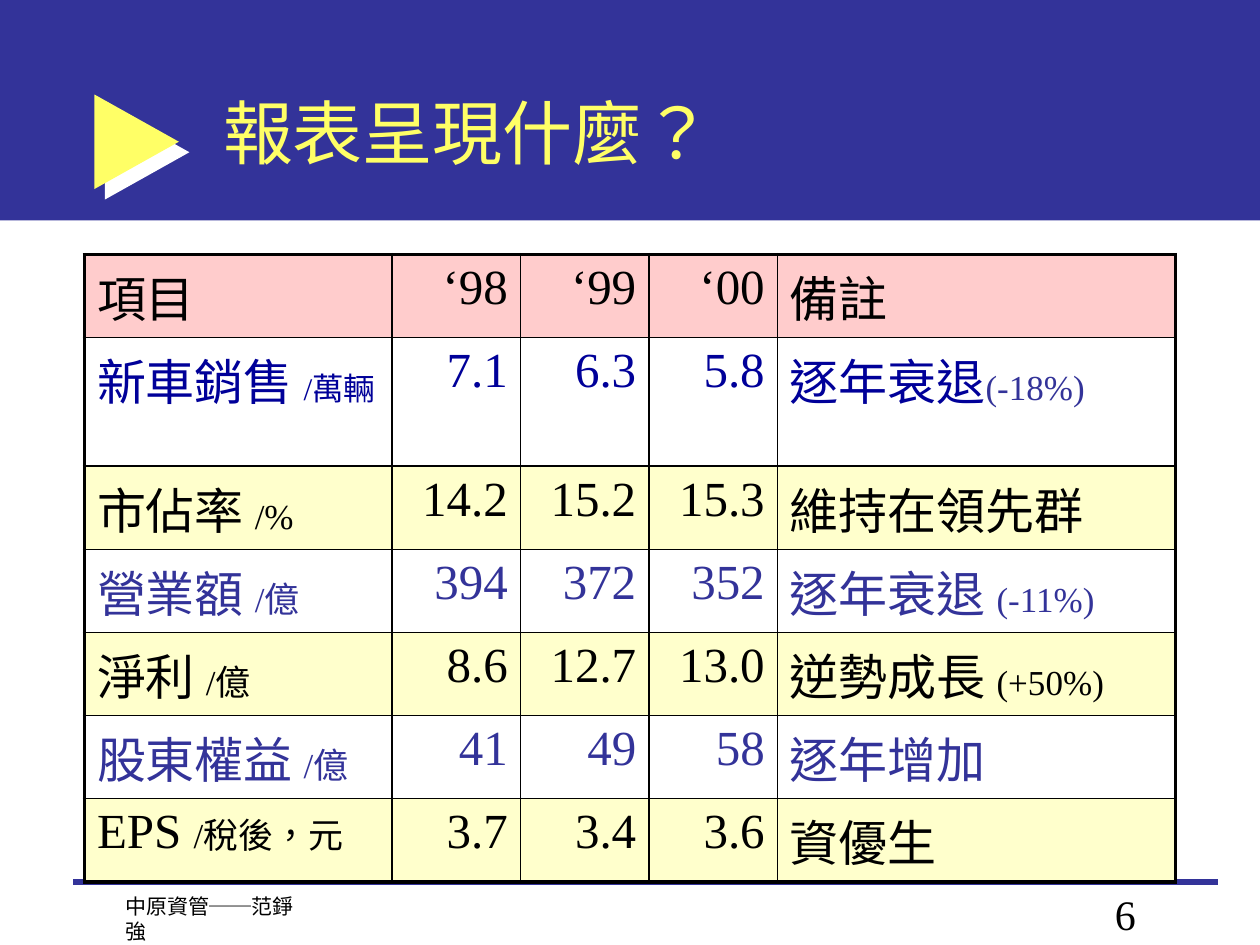
from lxml.etree import SubElement
from pptx import Presentation
from pptx.dml.color import RGBColor
from pptx.enum.shapes import MSO_CONNECTOR, MSO_SHAPE
from pptx.enum.text import MSO_ANCHOR, PP_ALIGN
from pptx.oxml.ns import qn
from pptx.util import Emu, Pt

EMU_PER_PX = 9144  # 100 px to the inch

BLUE, NAVY, YELLOW = "333399", "000099", "FFFF66"
BLACK, WHITE, PINK, CREAM = "000000", "FFFFFF", "FFCCCC", "FFFFCC"
SERIF, SANS = "Times New Roman", "Arial"


def px(length):
    return Emu(length * EMU_PER_PX)


def color(value):
    return RGBColor.from_string(value)


class SlideBuilder:
    def __init__(self, slide):
        self.slide = slide
        self.shapes = slide.shapes

    def add_run(self, paragraph, text, size, value, font=SERIF):
        run = paragraph.add_run()
        run.text = text
        run.font.name = font
        run.font.size = Pt(size)
        run.font.color.rgb = color(value)
        # Traditional Chinese glyphs and punctuation
        run._r.get_or_add_rPr().set("lang", "zh-TW")

    def shape(self, kind, box, fill):
        shape = self.shapes.add_shape(kind, *map(px, box))
        shape.shadow.inherit = False
        shape.fill.solid()
        shape.fill.fore_color.rgb = color(fill)
        shape.line.fill.background()
        return shape

    def hard_shadow(self, shape, value, distance):
        effects = shape.element.spPr.find(qn("a:effectLst"))
        shadow = SubElement(effects, qn("a:outerShdw"), dist=str(Pt(distance)),
                            dir="2700000", algn="ctr", rotWithShape="0")
        SubElement(shadow, qn("a:srgbClr"), val=value)

    def line(self, start, end, value, width):
        line = self.shapes.add_connector(MSO_CONNECTOR.STRAIGHT, *map(px, start + end))
        line.line.color.rgb = color(value)
        line.line.width = Pt(width)
        SubElement(line.element.spPr, qn("a:effectLst"))

    def text(self, box, text, size):
        frame = self.shapes.add_textbox(*map(px, box)).text_frame
        frame.word_wrap = True
        self.add_run(frame.paragraphs[0], text, size, BLACK)

    def title(self, box, text, size):
        title = self.shapes.title
        # Bring the title in front of the band
        title.element.getparent().append(title.element)
        title.left, title.top, title.width, title.height = map(px, box)
        frame = title.text_frame
        frame.vertical_anchor = MSO_ANCHOR.MIDDLE
        paragraph = frame.paragraphs[0]
        paragraph.alignment = PP_ALIGN.LEFT
        self.add_run(paragraph, text, size, YELLOW, SANS)

    def cell_borders(self, cell, outer_sides):
        properties = cell._tc.get_or_add_tcPr()
        for side in "LRTB":
            width = 2.25 if side in outer_sides else 1
            border = SubElement(properties, qn(f"a:ln{side}"), w=str(Pt(width)))
            fill = SubElement(border, qn("a:solidFill"))
            SubElement(fill, qn("a:srgbClr"), val=BLACK)

    def table(self, left, top, column_widths, row_heights, rows):
        """Each row is (fill, cells); each cell is a list of (text, size, colour)."""
        row_count, column_count = len(rows), len(column_widths)
        table = self.shapes.add_table(
            row_count, column_count, px(left), px(top),
            px(sum(column_widths)), px(sum(row_heights))).table
        table.first_row = table.horz_banding = False
        for column, width in zip(table.columns, column_widths):
            column.width = px(width)
        for row, height in zip(table.rows, row_heights):
            row.height = px(height)
        for row_index, (fill, cells) in enumerate(rows):
            for column_index, runs in enumerate(cells):
                cell = table.cell(row_index, column_index)
                edges = {"L": column_index == 0, "R": column_index == column_count - 1,
                         "T": row_index == 0, "B": row_index == row_count - 1}
                self.cell_borders(cell, [side for side in edges if edges[side]])
                if fill:
                    cell.fill.solid()
                    cell.fill.fore_color.rgb = color(fill)
                else:
                    cell.fill.background()
                paragraph = cell.text_frame.paragraphs[0]
                if not (edges["L"] or edges["R"]):
                    paragraph.alignment = PP_ALIGN.RIGHT
                for run in runs:
                    self.add_run(paragraph, *run)


def report_row(fill, value, label, figures, note, note_color=None):
    """Label and note are (main text, small text, small size)."""
    def pair(main, small, size, small_color):
        runs = [(main, 28, value)]
        return runs + [(small, size, small_color)] if small else runs

    numbers = [[(figure, 28, value)] for figure in figures.split()]
    return fill, [pair(*label, value), *numbers, pair(*note, note_color or value)]


def main():
    presentation = Presentation()
    presentation.slide_width, presentation.slide_height = px(1000), px(750)
    slide = presentation.slides.add_slide(presentation.slide_layouts[5])
    builder = SlideBuilder(slide)

    # Title band with arrow marker
    builder.shape(MSO_SHAPE.RECTANGLE, (0, 0, 1000, 175), BLUE)
    marker = builder.shape(MSO_SHAPE.RIGHT_ARROW, (75, 75, 67, 75), YELLOW)
    marker.adjustments[0], marker.adjustments[1] = 0.38, 1
    builder.hard_shadow(marker, WHITE, 8.5)
    builder.title((167, 42, 758, 125), "報表呈現什麼？", 40)

    # Footer
    builder.line((58, 700), (967, 700), BLUE, 3)
    builder.text((875, 700, 59, 50), "6", 24)
    builder.text((90, 704, 162, 30), "中原資管──范錚強", 12)

    # Report table; the sales row is taller for its two-line label
    rows = [
        report_row(PINK, BLACK, ("項目", "", 0), "‘98 ‘99 ‘00", ("備註", "", 0)),
        report_row(None, NAVY, ("新車銷售 ", "/萬輛", 18), "7.1 6.3 5.8",
                   ("逐年衰退", "(-18%)", 20), BLUE),
        report_row(CREAM, BLACK, ("市佔率 ", "/%", 20), "14.2 15.2 15.3",
                   ("維持在領先群", "", 0)),
        report_row(None, BLUE, ("營業額 ", "/億", 20), "394 372 352",
                   ("逐年衰退 ", "(-11%)", 20)),
        report_row(CREAM, BLACK, ("淨利 ", "/億", 20), "8.6 12.7 13.0",
                   ("逆勢成長 ", "(+50%)", 20)),
        report_row(None, BLUE, ("股東權益 ", "/億", 20), "41 49 58",
                   ("逐年增加", "", 0)),
        report_row(CREAM, BLACK, ("EPS ", "/稅後，元", 20), "3.7 3.4 3.6",
                   ("資優生", "", 0)),
    ]
    builder.table(67, 202, [244, 102, 102, 102, 316], [66, 102] + [66] * 5, rows)

    presentation.save("out.pptx")


if __name__ == "__main__":
    main()
